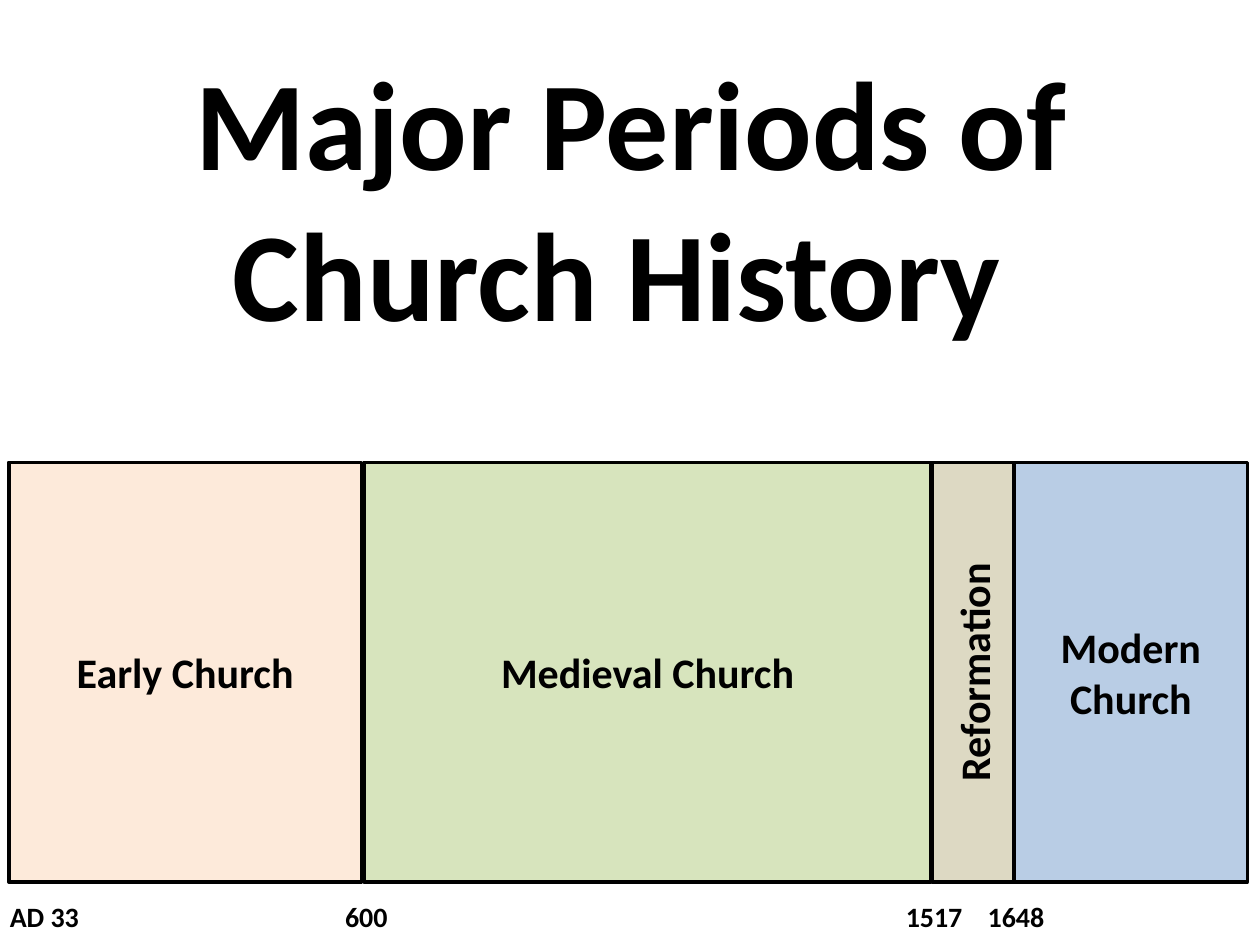
"""Build a timeline slide of the major periods of church history."""
from pptx import Presentation
from pptx.dml.color import RGBColor
from pptx.enum.shapes import MSO_SHAPE
from pptx.enum.text import MSO_ANCHOR, PP_ALIGN
from pptx.util import Inches, Pt

RECTANGLE = MSO_SHAPE.RECTANGLE
MIDDLE, TOP = MSO_ANCHOR.MIDDLE, MSO_ANCHOR.TOP
CENTER, LEFT = PP_ALIGN.CENTER, PP_ALIGN.LEFT

COLORS = {
    "ink": "000000",
    "early": "FDEADA",
    "medieval": "D7E4BD",
    "reformation": "DDD9C3",
    "modern": "B9CDE5",
}
BAND_TOP, BAND_HEIGHT = 3.67, 3.33
YEAR_TOP, YEAR_HEIGHT = 7.09, 0.37


def color(name):
    return RGBColor.from_string(COLORS[name])


def write(box, text, size, align, anchor, wrap=True):
    frame = box.text_frame
    frame.text = text
    frame.word_wrap = wrap
    frame.vertical_anchor = anchor
    paragraph = frame.paragraphs[0]
    paragraph.alignment = align
    font = paragraph.runs[0].font
    font.name = "Calibri"
    font.size = Pt(size)
    font.bold = True
    font.color.rgb = color("ink")


deck = Presentation()
deck.slide_width, deck.slide_height = Inches(10), Inches(7.5)
page = deck.slides.add_slide(deck.slide_layouts[6])

title = page.shapes.add_textbox(Inches(0.01), Inches(0.58), Inches(10), Inches(1.95))
write(title, "Major Periods of Church History ", 72, CENTER, MIDDLE)

periods = [
    ("Modern Church", "modern", 8.05, 1.85),
    ("Early Church", "early", 0.07, 2.8),
    ("Medieval Church", "medieval", 2.89, 4.5),
    ("Reformation", "reformation", 7.4, 0.65),
]
for name, fill, left, width in periods:
    band = page.shapes.add_shape(
        RECTANGLE, Inches(left), Inches(BAND_TOP), Inches(width), Inches(BAND_HEIGHT)
    )
    band.shadow.inherit = False
    band.fill.solid()
    band.fill.fore_color.rgb = color(fill)
    band.line.color.rgb = color("ink")
    band.line.width = Pt(2)
    write(band, name, 24, CENTER, MIDDLE)
    if name == "Reformation":
        band.text_frame._txBody.bodyPr.set("vert", "vert270")

years = [
    ("AD 33", -0.02, 0.76),
    ("600", 2.64, 0.59),
    ("1517", 7.09, 0.69),
    ("1648", 7.74, 0.69),
]
for year, left, width in years:
    label = page.shapes.add_textbox(
        Inches(left), Inches(YEAR_TOP), Inches(width), Inches(YEAR_HEIGHT)
    )
    write(label, year, 16, LEFT, TOP, wrap=False)

deck.save("out.pptx")
